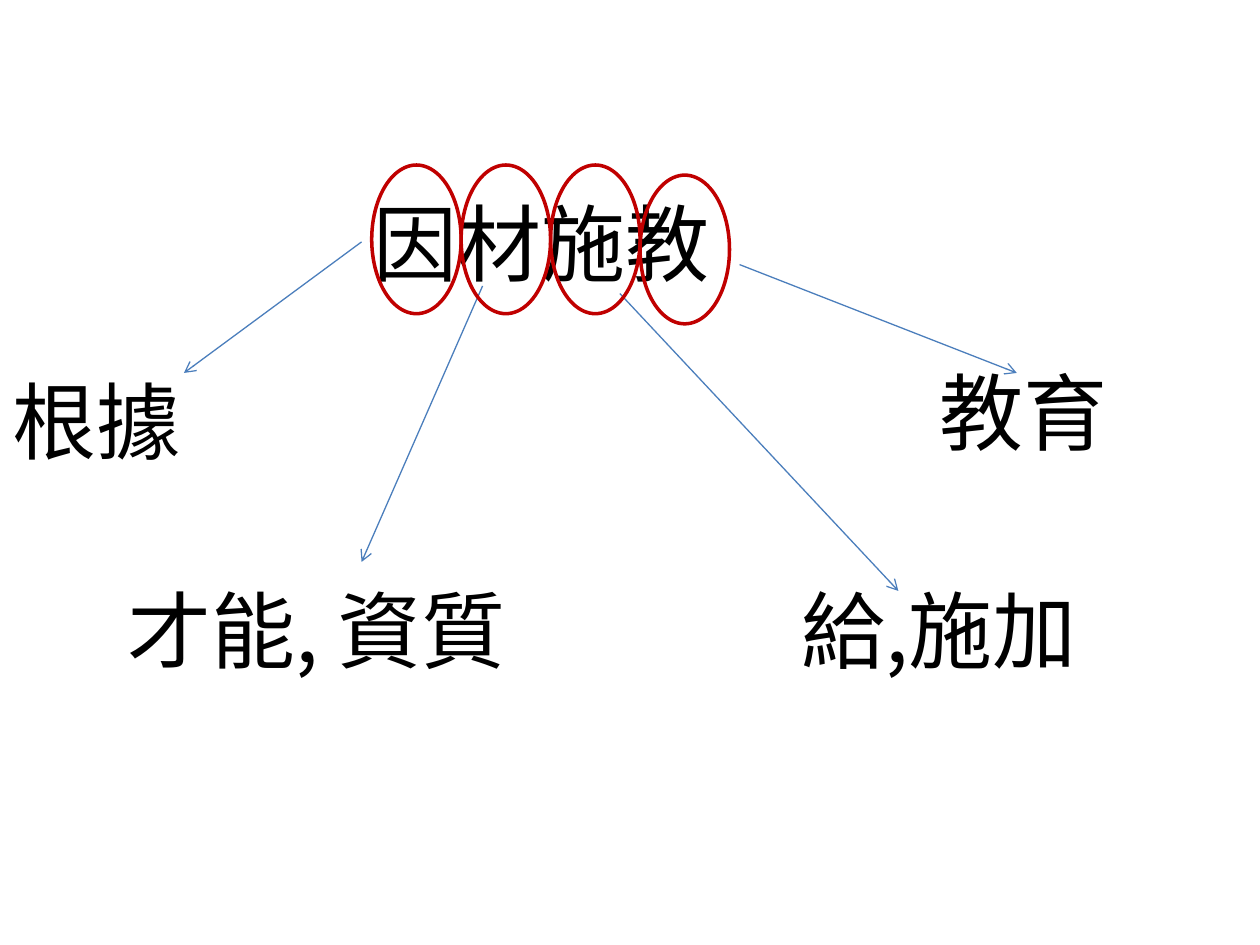
import pptx
import pptx.dml.color
import pptx.enum.shapes
import pptx.enum.text
import pptx.oxml.ns
import pptx.util
import lxml.etree

Inches = pptx.util.Inches
Pt = pptx.util.Pt
BLACK = pptx.dml.color.RGBColor(0x00, 0x00, 0x00)
BLUE = pptx.dml.color.RGBColor(0x4B, 0x7E, 0xBC)
RED = pptx.dml.color.RGBColor(0xC0, 0x00, 0x00)
IDIOM_FONT = "Lato"
MEANING_FONT = "Noto Sans CJK SC"
TEXT_HEIGHT = 0.91

# Text, left, top, width
MEANINGS = [
    ("根據", 0, 2.88, 2.36),
    ("才能, 資質", 0.91, 4.54, 4.72),
    ("給,施加", 6.26, 4.54, 3.54),
    ("教育", 7.36, 2.81, 2.24),
]
# Start and end of the arrow from each character to its meaning
ARROWS = [
    ((2.87, 1.92), (1.46, 2.96)),
    ((3.83, 2.27), (2.87, 4.46)),
    ((4.92, 2.33), (7.13, 4.69)),
    ((5.87, 2.1), (8.07, 2.96)),
]
# One ring per character, side by side; the last sits a little lower
RING_LEFT, RING_WIDTH, RING_HEIGHT = 2.95, 0.71, 1.18
RING_TOPS = [1.31, 1.31, 1.31, 1.39]


def add_text(slide, text, left, top, width, font_name):
    box = slide.shapes.add_textbox(
        Inches(left), Inches(top), Inches(width), Inches(TEXT_HEIGHT))
    frame = box.text_frame
    frame.word_wrap = True
    frame.auto_size = pptx.enum.text.MSO_AUTO_SIZE.SHAPE_TO_FIT_TEXT
    para = frame.paragraphs[0]
    para.text = text
    para.font.name = font_name
    para.font.size = Pt(48)
    para.font.color.rgb = BLACK


def add_arrow(slide, start, end):
    arrow = slide.shapes.add_connector(
        pptx.enum.shapes.MSO_CONNECTOR.STRAIGHT,
        *(Inches(value) for value in start + end))
    arrow.line.color.rgb = BLUE
    arrow.line.width = Pt(0.75)
    # Open arrowhead at the end, and no shadow
    qn = pptx.oxml.ns.qn
    lxml.etree.SubElement(
        arrow.line._get_or_add_ln(), qn("a:tailEnd"), type="arrow")
    lxml.etree.SubElement(arrow._element.spPr, qn("a:effectLst"))


def add_ring(slide, left, top):
    ring = slide.shapes.add_shape(
        pptx.enum.shapes.MSO_SHAPE.OVAL, Inches(left), Inches(top),
        Inches(RING_WIDTH), Inches(RING_HEIGHT))
    ring.shadow.inherit = False
    ring.fill.background()
    ring.line.color.rgb = RED
    ring.line.width = Pt(2)


def main():
    deck = pptx.Presentation()
    deck.slide_width = Inches(10)
    deck.slide_height = Inches(7.5)
    slide = deck.slides.add_slide(deck.slide_layouts[6])

    # Idiom and the meaning of each character
    add_text(slide, "因材施教", 2.87, 1.47, 2.97, IDIOM_FONT)
    for text, left, top, width in MEANINGS:
        add_text(slide, text, left, top, width, MEANING_FONT)

    # Arrows from characters to meanings
    for start, end in ARROWS:
        add_arrow(slide, start, end)

    # Rings around the characters
    for index, top in enumerate(RING_TOPS):
        add_ring(slide, RING_LEFT + index * RING_WIDTH, top)

    deck.save("out.pptx")


if __name__ == "__main__":
    main()
